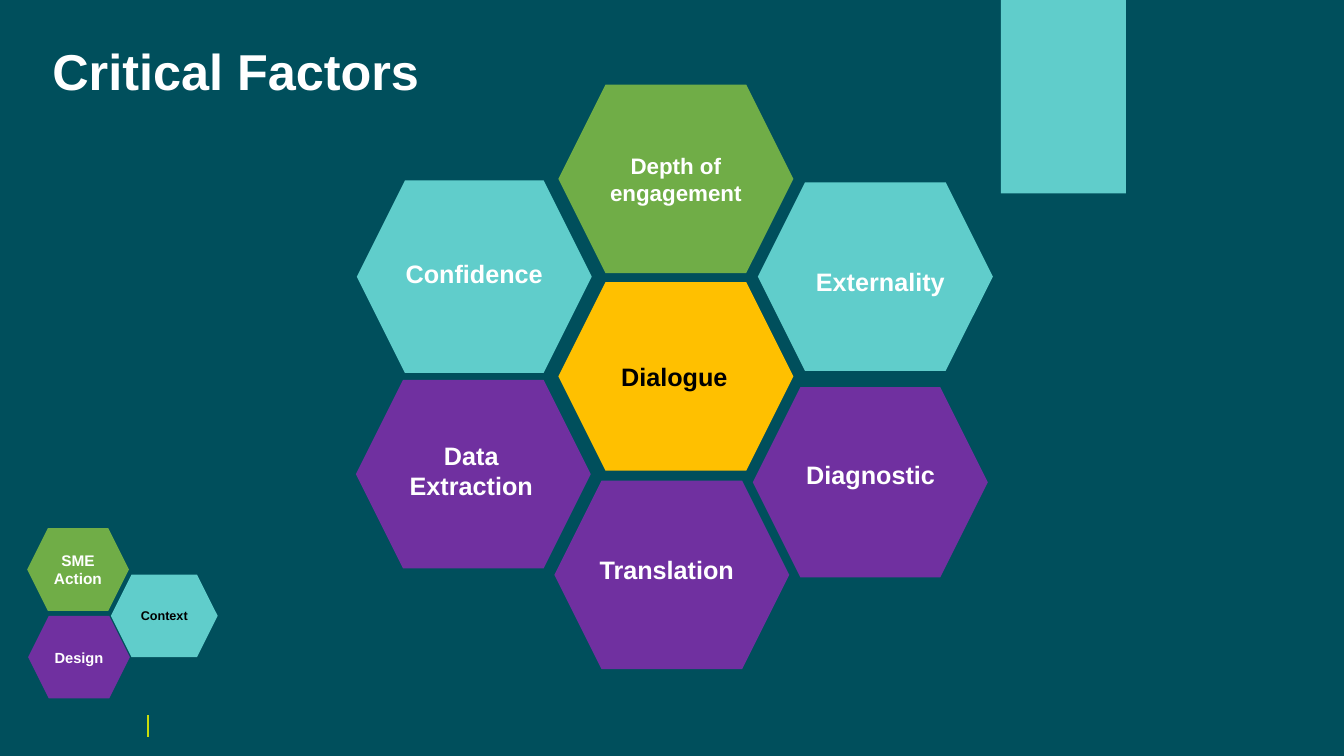
from lxml import etree
from pptx import Presentation
from pptx.dml.color import RGBColor
from pptx.enum.shapes import MSO_CONNECTOR, MSO_SHAPE
from pptx.enum.text import MSO_ANCHOR, PP_ALIGN
from pptx.oxml.ns import qn
from pptx.util import Pt

HEXAGON, RECTANGLE = MSO_SHAPE.HEXAGON, MSO_SHAPE.RECTANGLE
STRAIGHT = MSO_CONNECTOR.STRAIGHT
TOP, MIDDLE = MSO_ANCHOR.TOP, MSO_ANCHOR.MIDDLE
LEFT, CENTER = PP_ALIGN.LEFT, PP_ALIGN.CENTER

COLOURS = {
    "background": "004F5C", "teal": "60CDCB", "purple": "7030A0",
    "green": "70AD47", "amber": "FFC000", "lime": "C9DD0A",
    "white": "FFFFFF", "black": "000000",
}
FONT = "Arial"
HEX_WIDTH, HEX_HEIGHT = 167.8, 134.6
LABEL_HEIGHT = 28.8

# Text, fill, text colour, hexagon (left, top, height),
# label (left, top, width) relative to its hexagon, alignment
FACTORS = [
    ("Translation", "purple", "white", (396, 343.4, HEX_HEIGHT), (15.1, 49, 130.3), CENTER),
    ("Data Extraction", "purple", "white", (254.2, 271.4, HEX_HEIGHT), (26.6, 39.6, 111.6), CENTER),
    ("Diagnostic", "purple", "white", (537.8, 276.5, 136), (31, 48.2, 111.6), LEFT),
    ("Dialogue", "amber", "black", (398.9, 201.6, HEX_HEIGHT), (14.4, 53.3, 136.8), CENTER),
    ("Externality", "teal", "white", (541.4, 130.3, HEX_HEIGHT), (22.3, 56.2, 130.3), CENTER),
    ("Confidence", "teal", "white", (254.9, 128.9, 137.5), (18.7, 51.8, 130.3), CENTER),
]

# Lines, fill, text colour, size, (left, top, width) relative to the key
KEY = [
    (["Context"], "teal", "black", 9, (59.8, 33.1, 76.3)),
    (["SME", "Action"], "green", "white", 11, (0, 0, 72.7)),
    (["Design"], "purple", "white", 10.5, (0.7, 62.6, 72.7)),
]
KEY_HEIGHT = 59


def colour(name):
    return RGBColor.from_string(COLOURS[name])


def add_block(page, kind, box, fill):
    block = page.shapes.add_shape(kind, *(Pt(length) for length in box))
    block.shadow.inherit = False
    block.fill.solid()
    block.fill.fore_color.rgb = colour(fill)
    block.line.fill.background()
    return block


def write(shape, lines, size, text_colour, align=CENTER, anchor=MIDDLE):
    frame = shape.text_frame
    frame.word_wrap = True
    frame.vertical_anchor = anchor
    frame.text = "\n".join(lines)
    for para in frame.paragraphs:
        para.alignment = align
        para.font.name = FONT
        para.font.size = Pt(size)
        para.font.bold = True
        para.font.color.rgb = colour(text_colour)
    return frame


def add_label(page, box, text, size, text_colour, align, anchor=TOP):
    label = page.shapes.add_textbox(*(Pt(length) for length in box))
    return write(label, [text], size, text_colour, align, anchor)


def add_decoration(page):
    """Draw the top tab and the short footer rule."""
    add_block(page, RECTANGLE, (715, 0, 89.3, 138.2), "teal")
    rule = page.shapes.add_connector(STRAIGHT, Pt(105.6), Pt(511), Pt(105.6), Pt(526.5))
    rule.line.color.rgb = colour("lime")
    rule.line.width = Pt(1)
    etree.SubElement(rule._element.spPr, qn("a:effectLst"))


def add_title(page, box):
    frame = add_label(page, box, "Critical Factors", 36, "white", LEFT, MIDDLE)
    frame.margin_left = Pt(17.2)
    frame.paragraphs[0].line_spacing = 0.9


def add_factors(page):
    for text, fill, text_colour, (left, top, height), (inset, drop, width), align in FACTORS:
        add_block(page, HEXAGON, (left, top, HEX_WIDTH, height), fill)
        add_label(page, (left + inset, top + drop, width, LABEL_HEIGHT),
                  text, 18, text_colour, align)
    depth = add_block(page, HEXAGON, (398.9, 60.5, HEX_WIDTH, HEX_HEIGHT), "green")
    write(depth, ["Depth of engagement"], 16, "white")


def add_key(page, left, top):
    for lines, fill, text_colour, size, (inset, drop, width) in KEY:
        entry = add_block(page, HEXAGON, (left + inset, top + drop, width, KEY_HEIGHT), fill)
        write(entry, lines, size, text_colour)


def main():
    deck = Presentation()
    deck.slide_width, deck.slide_height = Pt(960), Pt(540)
    page = deck.slides.add_slide(deck.slide_layouts[6])
    page.background.fill.solid()
    page.background.fill.fore_color.rgb = colour("background")
    add_decoration(page)
    add_title(page, (20.2, 25.9, 725, 54.7))
    add_factors(page)
    add_key(page, 19.4, 377.3)
    deck.save("out.pptx")


if __name__ == "__main__":
    main()
